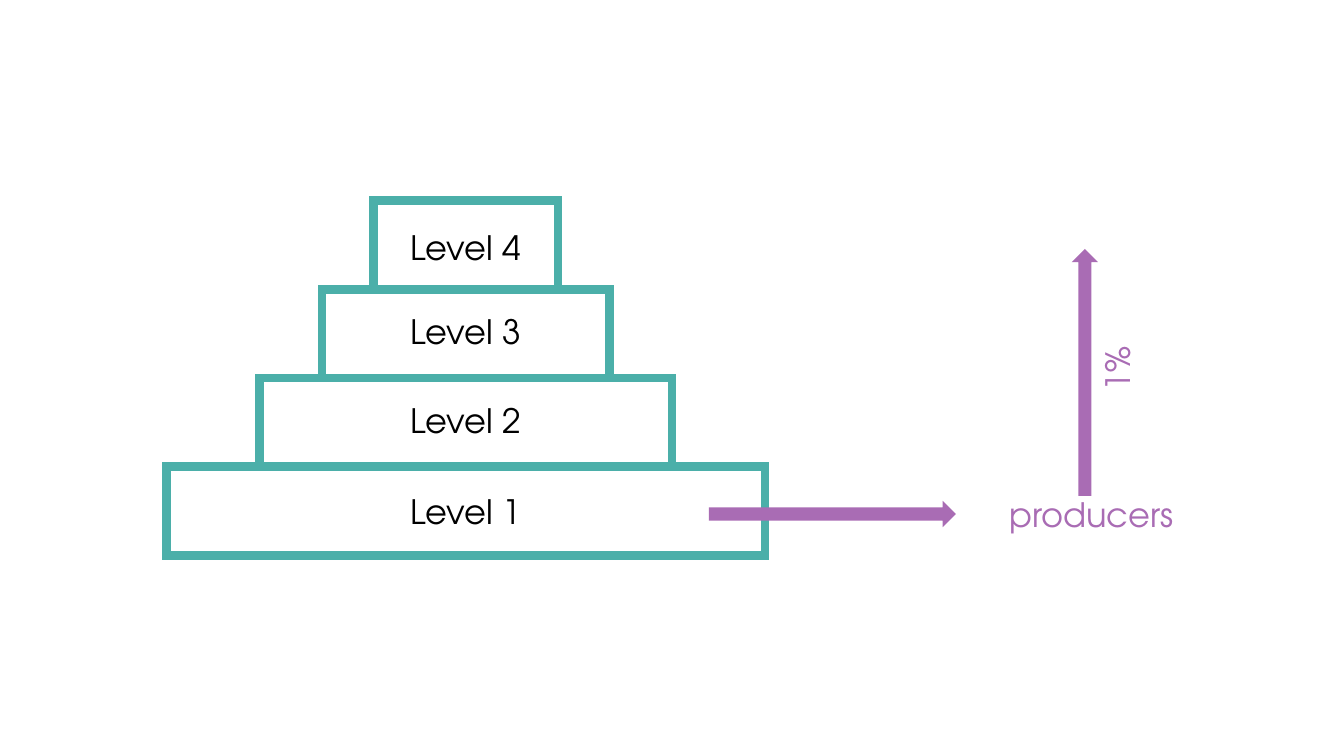
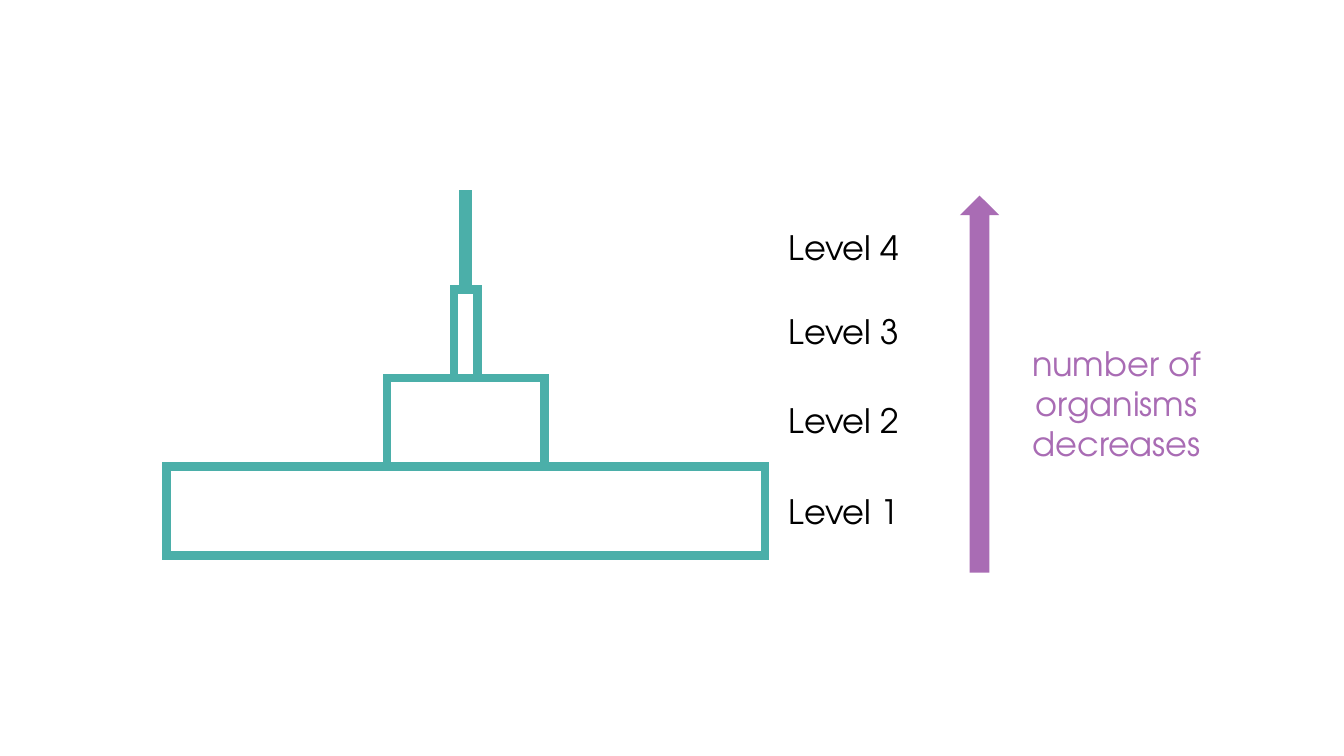
from dataclasses import dataclass

from lxml import etree
from pptx import Presentation
from pptx.dml.color import RGBColor
from pptx.enum.shapes import MSO_SHAPE
from pptx.enum.text import MSO_AUTO_SIZE, PP_ALIGN
from pptx.oxml.ns import qn
from pptx.util import Inches, Pt

RECTANGLE = MSO_SHAPE.RECTANGLE
RIGHT_ARROW = MSO_SHAPE.RIGHT_ARROW
UP_ARROW = MSO_SHAPE.UP_ARROW
FIT_TEXT = MSO_AUTO_SIZE.SHAPE_TO_FIT_TEXT
CENTER = PP_ALIGN.CENTER
BLANK_LAYOUT = 6


@dataclass(frozen=True)
class Theme:
    """Colours, font and sizes shared by the slides."""
    step: RGBColor = RGBColor(0x4B, 0xAF, 0xA9)
    accent: RGBColor = RGBColor(0xA9, 0x6C, 0xB4)
    text: RGBColor = RGBColor(0, 0, 0)
    font: str = "TeX Gyre Adventor"
    size: Pt = Pt(24)
    outline: Pt = Pt(6)


@dataclass(frozen=True)
class Box:
    """A region of a slide, in inches."""
    left: float
    top: float
    width: float
    height: float

    def inner(self, dx, dy, width, height):
        """Return a box placed relative to this one."""
        return Box(self.left + dx, self.top + dy, width, height)

    def lengths(self):
        """Return the position and size as slide lengths."""
        return [Inches(v) for v in (self.left, self.top, self.width, self.height)]


THEME = Theme()
PYRAMID = Box(1.65, 1.99, 5.94, 3.52)
LEVELS = ("Level 4", "Level 3", "Level 2", "Level 1")
LABEL_OFFSETS = (0.21, 0.17, 0.17, 0.19)
LABEL_WIDTH, LABEL_HEIGHT = 1.56, 0.5
STEP_HEIGHT = PYRAMID.height / len(LEVELS)


def add_label(slide, box, text, color, rotation=0):
    """Write centred text in a box."""
    label = slide.shapes.add_textbox(*box.lengths())
    label.rotation = rotation
    frame = label.text_frame
    frame.word_wrap = True
    frame.auto_size = FIT_TEXT
    paragraph = frame.paragraphs[0]
    paragraph.alignment = CENTER
    run = paragraph.add_run()
    run.text = text
    run.font.name = THEME.font
    run.font.size = THEME.size
    run.font.color.rgb = color


def add_step(slide, box):
    """Draw one outlined step with sharp corners."""
    step = slide.shapes.add_shape(RECTANGLE, *box.lengths())
    step.shadow.inherit = False
    step.fill.background()
    step.line.color.rgb = THEME.step
    step.line.width = THEME.outline
    outline = step.line._get_or_add_ln()
    etree.SubElement(outline, qn("a:miter")).set("lim", "800000")


def add_arrow(slide, direction, box):
    """Draw a solid block arrow."""
    arrow = slide.shapes.add_shape(direction, *box.lengths())
    arrow.shadow.inherit = False
    arrow.fill.solid()
    arrow.fill.fore_color.rgb = THEME.accent
    arrow.line.fill.background()


def add_pyramid(slide, box, widths, top_lift=0):
    """Stack centred steps of the given widths, the top one first."""
    for level, width in enumerate(widths):
        lift = top_lift if level == 0 else 0
        add_step(slide, box.inner((box.width - width) / 2,
                                  level * STEP_HEIGHT - lift, width, STEP_HEIGHT))


def add_level_labels(slide, box, dx):
    """Name each level at a distance from the left side of the box."""
    for level, (name, offset) in enumerate(zip(LEVELS, LABEL_OFFSETS)):
        add_label(slide, box.inner(dx, level * STEP_HEIGHT + offset,
                                   LABEL_WIDTH, LABEL_HEIGHT), name, THEME.text)


def add_producer_share(slide, box):
    """Show the producers and the share passed upwards."""
    add_arrow(slide, RIGHT_ARROW, box.inner(0, 2.5, 2.45, 0.26))
    add_label(slide, box.inner(2.75, 2.38, 2.09, 0.5), "producers", THEME.accent)
    add_arrow(slide, UP_ARROW, box.inner(3.6, 0, 0.26, 2.45))
    add_label(slide, box.inner(3, 0.94, 2.09, 0.5), "1%", THEME.accent, 270)


def add_decrease(slide, box):
    """Show the decrease in organisms along an upward arrow."""
    add_arrow(slide, UP_ARROW, box.inner(0, 0, 0.39, box.height))
    add_label(slide, box.inner(0.38, 1.41, 2.35, 1.31),
              "number of organisms decreases", THEME.accent)


def build_energy_slide(slide):
    """Build the pyramid with producers at its base."""
    add_pyramid(slide, PYRAMID, (1.83, 2.85, 4.09, PYRAMID.width))
    add_level_labels(slide, PYRAMID, (PYRAMID.width - LABEL_WIDTH) / 2)
    add_producer_share(slide, Box(7.03, 2.47, 5.09, 2.88))


def build_numbers_slide(slide):
    """Build the pyramid of organism numbers."""
    add_decrease(slide, Box(9.52, 1.94, 2.73, 3.74))
    add_pyramid(slide, PYRAMID, (0.05, 0.23, 1.56, PYRAMID.width), top_lift=0.06)
    add_level_labels(slide, PYRAMID, PYRAMID.width)


def main():
    """Build and save the presentation."""
    presentation = Presentation()
    presentation.slide_width = Inches(13.33)
    presentation.slide_height = Inches(7.5)
    for build in (build_energy_slide, build_numbers_slide):
        build(presentation.slides.add_slide(presentation.slide_layouts[BLANK_LAYOUT]))
    presentation.save("out.pptx")


if __name__ == "__main__":
    main()
